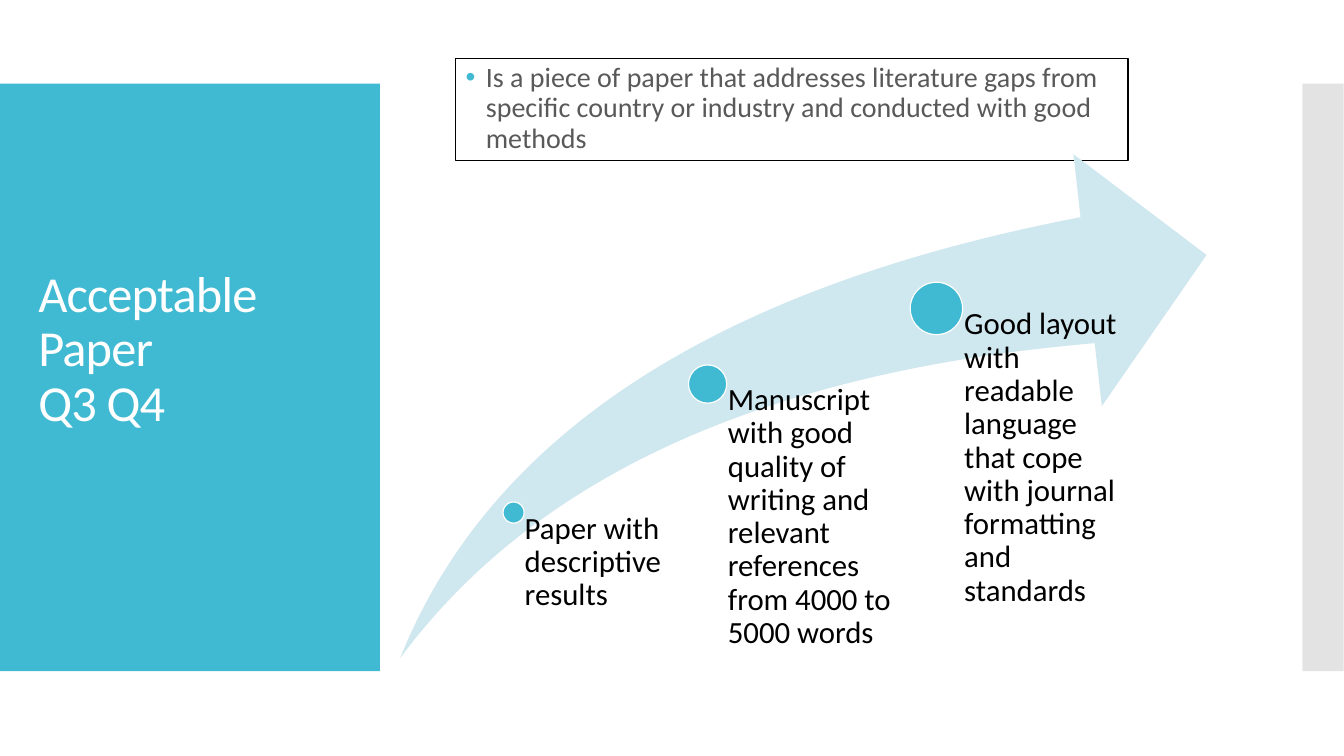
"""Build the acceptable paper slide: a side title, a definition and a rising arrow."""
from dataclasses import dataclass

from lxml import etree
from pptx import Presentation
from pptx.dml.color import RGBColor
from pptx.enum.shapes import MSO_SHAPE
from pptx.enum.text import MSO_ANCHOR, MSO_AUTO_SIZE, PP_ALIGN
from pptx.oxml.ns import qn
from pptx.util import Emu, Pt

RECT, OVAL, SWOOSH = MSO_SHAPE.RECTANGLE, MSO_SHAPE.OVAL, MSO_SHAPE.SWOOSH_ARROW
TOP, MIDDLE = MSO_ANCHOR.TOP, MSO_ANCHOR.MIDDLE
LEFT = PP_ALIGN.LEFT
NO_AUTOFIT = MSO_AUTO_SIZE.NONE
PX = 9144


@dataclass(frozen=True)
class Theme:
    """Colours, font and type sizes of the slide."""
    accent: str = "40BAD2"
    pale: str = "CFE7EE"
    grey: str = "C8C8C8"
    white: str = "FFFFFF"
    black: str = "000000"
    body: str = "595959"
    font: str = "Calibri"
    title_size: int = 36
    body_size: int = 20
    label_size: int = 22
    line_width: float = 0.85
    line_spacing: float = 0.9


THEME = Theme()
ARROW = (397, 153, 800, 500)
MILESTONES = [
    (499, 498, 21, 186, "Paper with descriptive results"),
    (683, 362, 38, 192, "Manuscript with good quality of writing and relevant "
                        "references from 4000 to 5000 words"),
    (903, 280, 52, 192, "Good layout with readable language that cope with "
                        "journal formatting and standards"),
]


def px(n):
    """Turn pixels into EMU."""
    return Emu(round(n * PX))


def apply(obj, formats):
    """Set every attribute named in a dict of format values."""
    for name, value in formats.items():
        setattr(obj, name, value)


def place(sp, box):
    """Move and size a shape by its pixel box."""
    apply(sp, dict(zip(("left", "top", "width", "height"), map(px, box))))


def paint(sp, fill, line=None):
    """Give a shape a solid fill and an optional outline."""
    sp.fill.solid()
    sp.fill.fore_color.rgb = RGBColor.from_string(fill)
    if line:
        sp.line.color.rgb = RGBColor.from_string(line)
        sp.line.width = Pt(THEME.line_width)
    else:
        sp.line.fill.background()


def add_shape(s, kind, box, fill, line=None):
    """Add a flat preset shape."""
    sp = s.shapes.add_shape(kind, *map(px, box))
    sp.shadow.inherit = False
    paint(sp, fill, line)
    return sp


def write(sp, text, size, color, frame):
    """Write one left-aligned paragraph and return it with its run."""
    tf = sp.text_frame
    apply(tf, {"word_wrap": True, "auto_size": NO_AUTOFIT, **frame})
    p = tf.paragraphs[0]
    p.text = text
    apply(p, {"alignment": LEFT, "line_spacing": THEME.line_spacing})
    for r in p.runs:
        apply(r.font, {"name": THEME.font, "size": Pt(size)})
        r.font.color.rgb = RGBColor.from_string(color)
    return p


def set_alpha(sp, percent):
    """Make a solid fill partly transparent."""
    color = sp.element.spPr.find(".//" + qn("a:srgbClr"))
    etree.SubElement(color, qn("a:alpha"), val=str(percent * 1000))


def set_bullet(p, color, indent):
    """Give a paragraph a coloured round bullet with a hanging indent."""
    ppr = p._p.get_or_add_pPr()
    ppr.set("marL", str(px(indent)))
    ppr.set("indent", str(px(-indent)))
    clr = etree.SubElement(ppr, qn("a:buClr"))
    etree.SubElement(clr, qn("a:srgbClr"), val=color)
    etree.SubElement(ppr, qn("a:buFont"), typeface="Arial")
    etree.SubElement(ppr, qn("a:buChar"), char="•")


def bring_forward(sp):
    """Put a shape in front of those drawn so far."""
    sp.element.getparent().append(sp.element)


def add_panels(s):
    """Add the coloured title panel and the pale strip at the right edge."""
    add_shape(s, RECT, (0, 83, 377, 583), THEME.accent)
    strip = add_shape(s, RECT, (1292, 83, 41, 583), THEME.grey)
    set_alpha(strip, 50)


def fill_title(sp, text):
    """Format the title placeholder on the side panel."""
    bring_forward(sp)
    place(sp, (28, 123, 322, 503))
    p = write(sp, text, THEME.title_size, THEME.white,
              {"vertical_anchor": MIDDLE, "margin_bottom": px(59)})
    for r in p.runs:
        r.font._element.set("spc", "-60")


def fill_definition(sp, text):
    """Format the body placeholder as a boxed bullet."""
    bring_forward(sp)
    place(sp, (452, 58, 667, 101))
    paint(sp, THEME.white, THEME.black)
    p = write(sp, text, THEME.body_size, THEME.body, {"vertical_anchor": TOP})
    p.space_before = Pt(12)
    set_bullet(p, THEME.accent, 20)


def add_arrow(s):
    """Add the rising arrow."""
    sp = add_shape(s, SWOOSH, ARROW, THEME.pale)
    for i in range(2):
        sp.adjustments[i] = 0.25


def add_milestone(s, left, top, size, width, text):
    """Add a dot and a label that hangs from its centre to the arrow's foot."""
    add_shape(s, OVAL, (left, top, size, size), THEME.accent, THEME.white)
    x, y = left + size / 2, top + size / 2
    foot = ARROW[1] + ARROW[3]
    sp = s.shapes.add_textbox(*map(px, (x, y, width, foot - y)))
    write(sp, text, THEME.label_size, THEME.black,
          {"margin_left": px(size * 0.53), "margin_top": 0,
           "margin_right": 0, "margin_bottom": 0})


def main():
    """Build and save the slide."""
    prs = Presentation()
    apply(prs, {"slide_width": px(1333.33), "slide_height": px(750)})
    s = prs.slides.add_slide(prs.slide_layouts[1])
    add_panels(s)
    fill_title(s.shapes.title, "Acceptable Paper\vQ3 Q4")
    fill_definition(s.placeholders[1],
                    "Is a piece of paper that addresses literature gaps from specific "
                    "country or industry and conducted with good methods")
    add_arrow(s)
    for milestone in MILESTONES:
        add_milestone(s, *milestone)
    prs.save("out.pptx")


if __name__ == "__main__":
    main()
